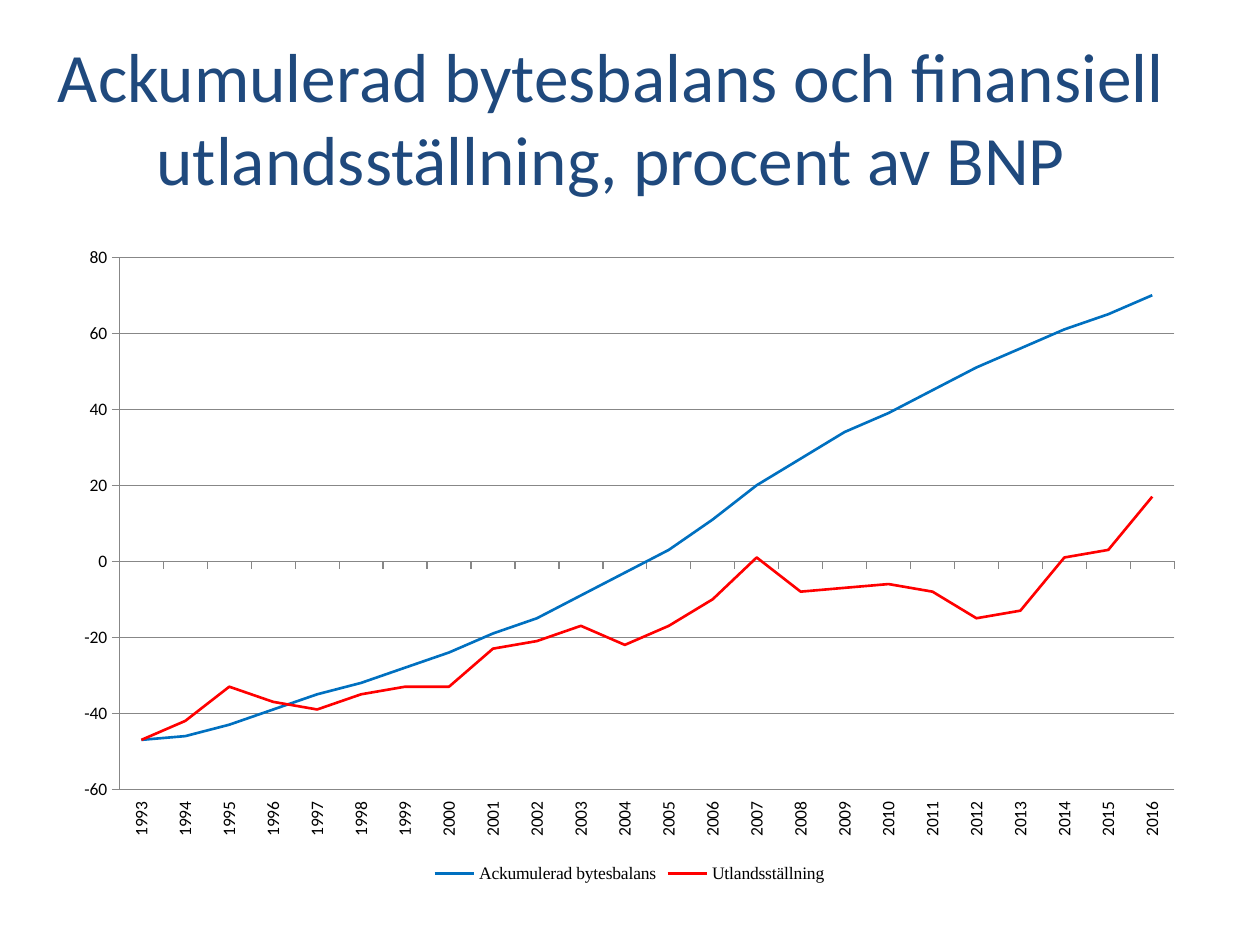
from dataclasses import dataclass

from pptx import Presentation
from pptx.chart.data import CategoryChartData
from pptx.dml.color import RGBColor
from pptx.enum.chart import XL_CHART_TYPE, XL_LEGEND_POSITION, XL_TICK_LABEL_POSITION, XL_TICK_MARK
from pptx.enum.text import MSO_ANCHOR, MSO_AUTO_SIZE, PP_ALIGN
from pptx.util import Inches, Pt

COLOURS = {
    "title": "1F497D",
    "text": "000000",
    "axis": "878787",
    "balance": "0070C0",
    "position": "FF0000",
}


@dataclass
class LineSeries:
    name: str
    colour: str
    values: list[int]


YEARS = [str(year) for year in range(1993, 2017)]
SERIES = [
    LineSeries("Ackumulerad bytesbalans", "balance",
               [-47, -46, -43, -39, -35, -32, -28, -24, -19, -15, -9, -3,
                3, 11, 20, 27, 34, 39, 45, 51, 56, 61, 65, 70]),
    LineSeries("Utlandsställning", "position",
               [-47, -42, -33, -37, -39, -35, -33, -33, -23, -21, -17, -22,
                -17, -10, 1, -8, -7, -6, -8, -15, -13, 1, 3, 17]),
]


def set_attributes(target, values: dict) -> None:
    for name, value in values.items():
        setattr(target, name, value)


def format_font(font, size: float, colour: str, name: str = "Calibri") -> None:
    set_attributes(font, {"size": Pt(size), "name": name, "bold": False})
    font.color.rgb = RGBColor.from_string(COLOURS[colour])


def format_line(line, colour: str, width: float) -> None:
    line.color.rgb = RGBColor.from_string(COLOURS[colour])
    line.width = Pt(width)


def add_title(slide, text: str) -> None:
    title = slide.shapes.title
    set_attributes(title, {"left": Inches(0.2), "top": Inches(0.3),
                           "width": Inches(9.3), "height": Inches(1.25)})
    frame = title.text_frame
    set_attributes(frame, {"word_wrap": True, "auto_size": MSO_AUTO_SIZE.NONE,
                           "vertical_anchor": MSO_ANCHOR.MIDDLE})
    para = frame.paragraphs[0]
    para.alignment = PP_ALIGN.CENTER
    span = para.add_run()
    span.text = text
    format_font(span.font, 39.6, "title")


def format_axis(axis, values: dict) -> None:
    set_attributes(axis, {"major_tick_mark": XL_TICK_MARK.OUTSIDE,
                          "minor_tick_mark": XL_TICK_MARK.NONE, **values})
    format_line(axis.format.line, "axis", 0.75)
    format_font(axis.tick_labels.font, 10, "text")


def add_line_chart(slide, years: list[str], series: list[LineSeries]) -> None:
    data = CategoryChartData()
    data.categories = years
    for item in series:
        data.add_series(item.name, item.values)
    chart = slide.shapes.add_chart(
        XL_CHART_TYPE.LINE, Inches(0.49), Inches(1.86),
        Inches(9.01), Inches(5.19), data).chart
    set_attributes(chart, {"has_title": False, "has_legend": True})
    format_font(chart.font, 10, "text")
    set_attributes(chart.legend, {"position": XL_LEGEND_POSITION.BOTTOM,
                                  "include_in_layout": False})
    format_font(chart.legend.font, 10, "text", "Times New Roman")

    plot = chart.plots[0]
    plot.vary_by_categories = False
    for line, item in zip(plot.series, series):
        line.smooth = False
        format_line(line.format.line, item.colour, 1.5)

    format_axis(chart.category_axis, {"has_major_gridlines": False})
    labels = chart.category_axis.tick_labels
    set_attributes(labels, {"number_format": "General", "number_format_is_linked": False})
    chart.category_axis.tick_label_position = XL_TICK_LABEL_POSITION.LOW
    text_body = chart.category_axis._element.txPr.bodyPr
    text_body.set("rot", "-5400000")
    text_body.set("vert", "horz")

    format_axis(chart.value_axis, {"minimum_scale": -60, "maximum_scale": 80,
                                   "major_unit": 20, "has_major_gridlines": True})
    format_line(chart.value_axis.major_gridlines.format.line, "axis", 0.75)


def main() -> None:
    deck = Presentation()
    set_attributes(deck, {"slide_width": Inches(10), "slide_height": Inches(7.5)})
    page = deck.slides.add_slide(deck.slide_layouts[5])
    add_title(page, "Ackumulerad bytesbalans och finansiell utlandsställning, procent av BNP")
    add_line_chart(page, YEARS, SERIES)
    deck.save("out.pptx")


if __name__ == "__main__":
    main()
